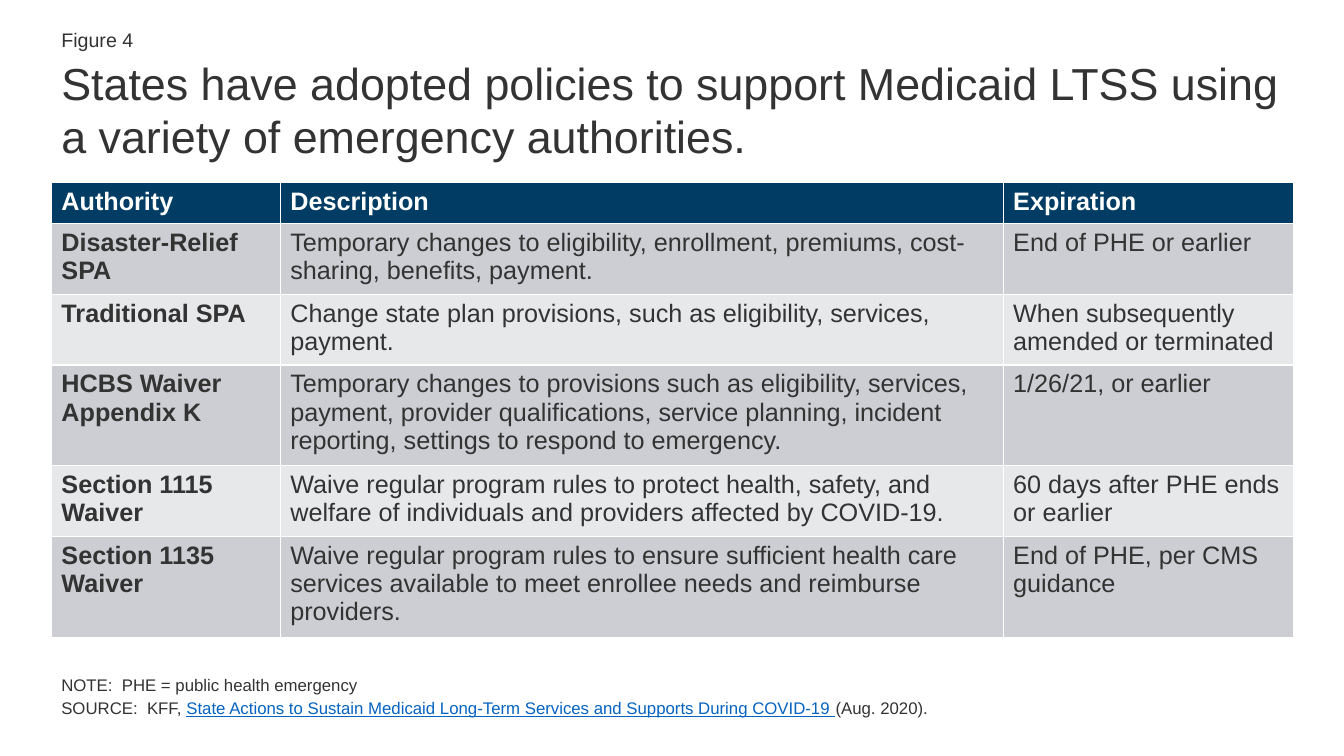
"""Build the slide on emergency authorities for Medicaid LTSS."""
from pptx import Presentation, util as u
from pptx.dml.color import RGBColor
from pptx.enum import text as t

THEME = dict(
    font="Arial", ink="333333", white="FFFFFF", link="0563C1",
    head="003C64", bands=("CCCED3", "E7E8EA"),
    label=14, title=32, cell=18, note=12,
)
LEFT, WIDE = 0.51, 12.32


def add_run(para, words, size, color=THEME["ink"], **style):
    run = para.add_run()
    run.text = words
    look = dict(name=THEME["font"], size=u.Pt(size), **style)
    for key, val in look.items():
        setattr(run.font, key, val)
    run.font.color.rgb = RGBColor.from_string(color)


def add_box(top, wide, high, anchor=t.MSO_ANCHOR.TOP):
    box = slide.shapes.add_textbox(*map(u.Inches, (LEFT, top, wide, high)))
    frame = box.text_frame
    frame.word_wrap = True
    frame.vertical_anchor = anchor
    return frame


deck = Presentation()
deck.slide_width, deck.slide_height = u.Inches(13.33), u.Inches(7.5)
slide = deck.slides.add_slide(deck.slide_layouts[6])

label = add_box(0.22, 5.15, 0.35, t.MSO_ANCHOR.MIDDLE)
add_run(label.paragraphs[0], "Figure 4", THEME["label"])

rows = [
    ("Authority", "Description", "Expiration"),
    ("Disaster-Relief SPA",
     "Temporary changes to eligibility, enrollment, premiums, cost-sharing, "
     "benefits, payment.",
     "End of PHE or earlier"),
    ("Traditional SPA",
     "Change state plan provisions, such as eligibility, services, payment.",
     "When subsequently amended or terminated"),
    ("HCBS Waiver Appendix K",
     "Temporary changes to provisions such as eligibility, services, payment, "
     "provider qualifications, service planning, incident reporting, "
     "settings to respond to emergency.",
     "1/26/21, or earlier"),
    ("Section 1115 Waiver",
     "Waive regular program rules to protect health, safety, and welfare of "
     "individuals and providers affected by COVID-19.",
     "60 days after PHE ends or earlier"),
    ("Section 1135 Waiver",
     "Waive regular program rules to ensure sufficient health care services "
     "available to meet enrollee needs and reimburse providers.",
     "End of PHE, per CMS guidance"),
]
cols = (2.27, 7.17, 2.88)
high = 0.41
grid = slide.shapes.add_table(
    len(rows), len(cols),
    *map(u.Inches, (LEFT, 1.81, WIDE, high * len(rows)))).table
for col, wide in zip(grid.columns, cols):
    col.width = u.Inches(wide)
for r, row in enumerate(rows):
    grid.rows[r].height = u.Inches(high)
    fill = THEME["bands"][(r - 1) % 2] if r else THEME["head"]
    ink = THEME["ink"] if r else THEME["white"]
    for c, words in enumerate(row):
        cell = grid.cell(r, c)
        cell.fill.solid()
        cell.fill.fore_color.rgb = RGBColor.from_string(fill)
        add_run(cell.text_frame.paragraphs[0], words, THEME["cell"], ink,
                bold=r == 0 or c == 0)

title = add_box(0.5, WIDE, 0.94)
add_run(title.paragraphs[0],
        "States have adopted policies to support Medicaid LTSS using "
        "a variety of emergency authorities.", THEME["title"])

notes = add_box(6.64, 11.2, 0.75)
add_run(notes.paragraphs[0], "NOTE:  PHE = public health emergency",
        THEME["note"])
source = notes.add_paragraph()
source.space_before = u.Pt(0.2 * THEME["note"])
add_run(source, "SOURCE:  KFF, ", THEME["note"])
add_run(source, "State Actions to Sustain Medicaid Long-Term Services and "
        "Supports During COVID-19 ", THEME["note"], THEME["link"],
        underline=True)
add_run(source, "(Aug. 2020).", THEME["note"])

deck.save("out.pptx")
